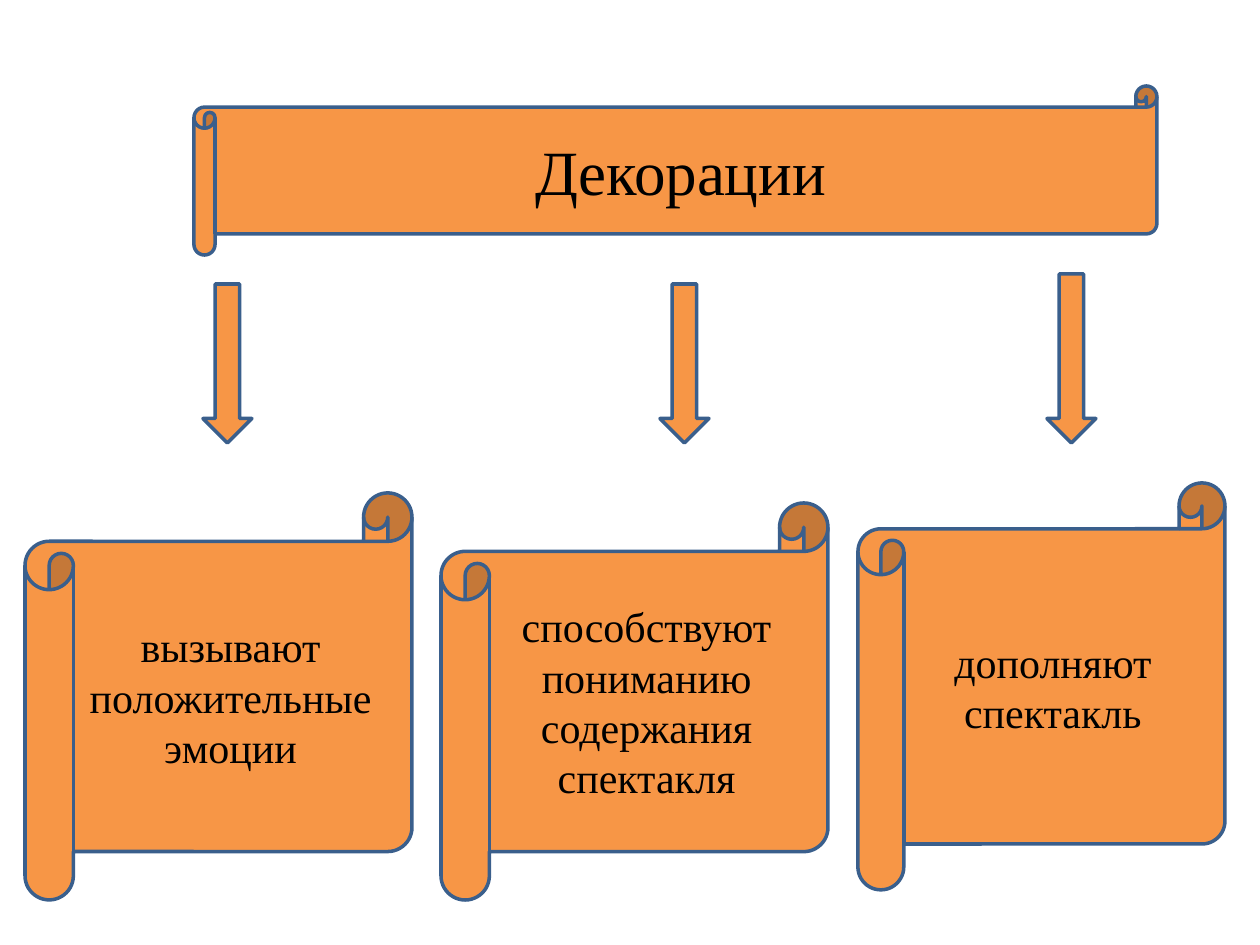
"""Build the slide on stage scenery: a title scroll with arrows to three scrolls."""
import pptx
import pptx.dml.color
import pptx.enum.shapes
import pptx.enum.text
import pptx.util

SCALE = 914400 // 126
FONT = "Times New Roman"
ORANGE, BLUE, BLACK = "F79646", "3A5F8C", "000000"
SCROLL = pptx.enum.shapes.MSO_SHAPE.HORIZONTAL_SCROLL
ARROW = pptx.enum.shapes.MSO_SHAPE.DOWN_ARROW
ARROW_WIDTH, ARROW_BOTTOM = 49, 443

TITLE = ("Декорации", (194, 86, 963, 169))
EFFECTS = [
    ("вызывают положительные эмоции", (25, 493, 387, 407)),
    ("способствуют пониманию содержания спектакля", (441, 503, 387, 397)),
    ("дополняют спектакль", (858, 483, 367, 407)),
]
ARROWS = [(203, 284), (660, 284), (1047, 274)]


def px(length):
    return pptx.util.Emu(length * SCALE)


def color(value):
    return pptx.dml.color.RGBColor.from_string(value)


def add_outlined(slide, kind, place):
    shape = slide.shapes.add_shape(kind, *map(px, place))
    shape.shadow.inherit = False
    shape.fill.solid()
    shape.fill.fore_color.rgb = color(ORANGE)
    shape.line.color.rgb = color(BLUE)
    shape.line.width = pptx.util.Pt(2)
    return shape


def add_scroll(slide, text, place, size):
    frame = add_outlined(slide, SCROLL, place).text_frame
    frame.word_wrap = True
    frame.vertical_anchor = pptx.enum.text.MSO_ANCHOR.MIDDLE
    para = frame.paragraphs[0]
    para.alignment = pptx.enum.text.PP_ALIGN.CENTER
    span = para.add_run()
    span.text = text
    span.font.name = FONT
    span.font.size = pptx.util.Pt(size)
    span.font.color.rgb = color(BLACK)


def main():
    deck = pptx.Presentation()
    deck.slide_width = pptx.util.Inches(10)
    deck.slide_height = pptx.util.Inches(7.5)
    slide = deck.slides.add_slide(deck.slide_layouts[6])
    add_scroll(slide, *TITLE, 36)
    for left, top in ARROWS:
        add_outlined(slide, ARROW, (left, top, ARROW_WIDTH, ARROW_BOTTOM - top))
    for text, place in EFFECTS:
        add_scroll(slide, text, place, 24)
    deck.save("out.pptx")


if __name__ == "__main__":
    main()
